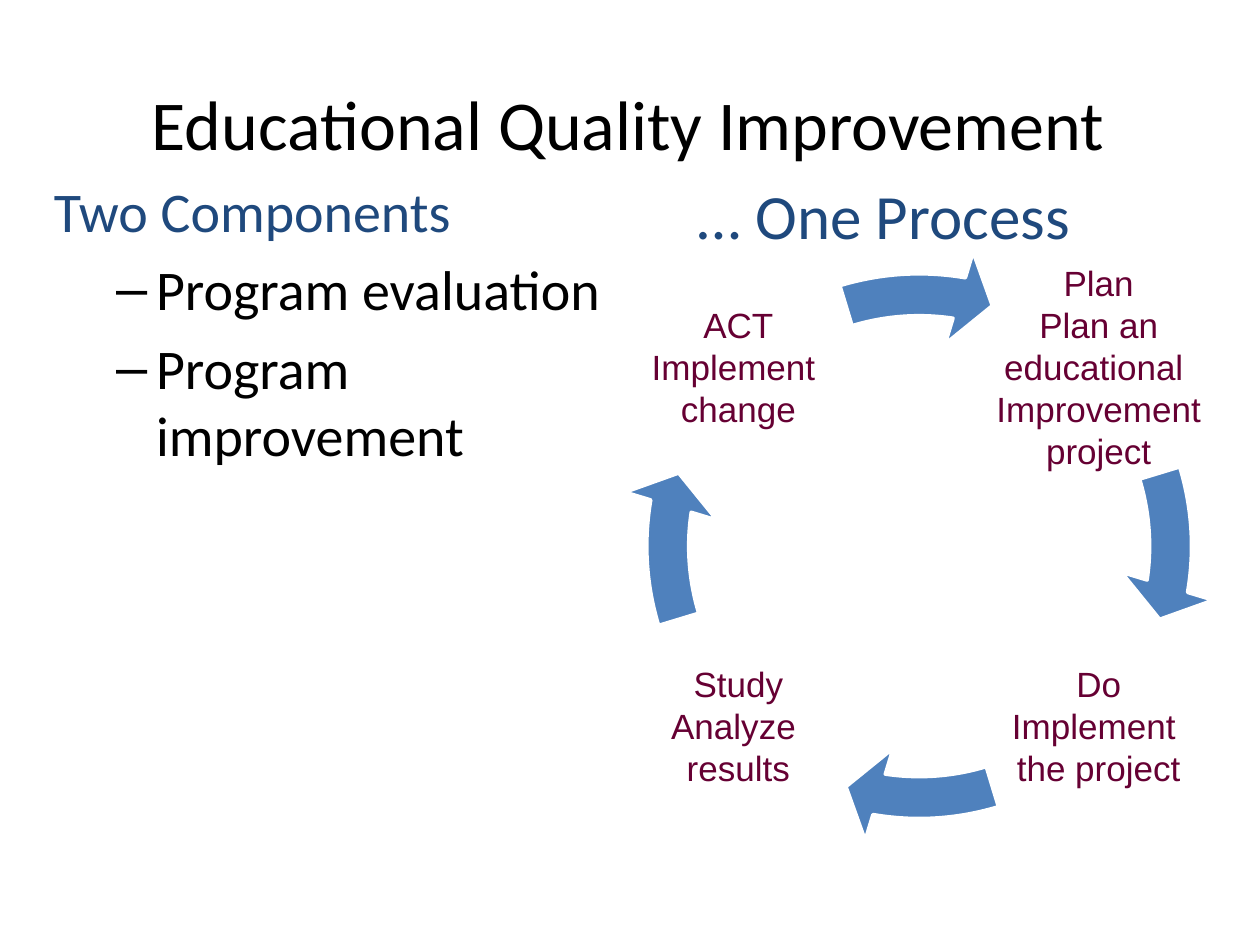
from pptx import Presentation
from pptx import util as u
from pptx.dml.color import RGBColor
from pptx.enum import shapes, text
from lxml import etree

THEME = {
    "ink": "000000", "head": "1F497D", "step": "660033",
    "arrow": "4F81BD", "edge": "FFFFFF",
    "title": 40, "sub": 36, "body": 32, "label": 20,
    "main": "Calibri", "alt": "Arial",
}
NS = "{http://schemas.openxmlformats.org/drawingml/2006/main}"


def apply(obj, vals):
    for key, val in vals.items():
        setattr(obj, key, val)


class Deck:
    def __init__(self, theme):
        self.theme = theme
        self.prs = Presentation()
        apply(self.prs, {"slide_width": u.Inches(10), "slide_height": u.Inches(7.5)})
        self.slide = self.prs.slides.add_slide(self.prs.slide_layouts[6])

    def color(self, name):
        return RGBColor.from_string(self.theme[name])

    def frame(self, area, pad=(0.1, 0.05), anchor=text.MSO_ANCHOR.TOP):
        box = self.slide.shapes.add_textbox(*map(u.Inches, area))
        side, edge = map(u.Inches, pad)
        apply(box.text_frame, {
            "word_wrap": True, "vertical_anchor": anchor,
            "margin_left": side, "margin_right": side,
            "margin_top": edge, "margin_bottom": edge,
        })
        return box.text_frame

    def line(self, frame, words, size, tone, face="main",
             align=text.PP_ALIGN.LEFT, first=True, bullet=None, gap=0):
        para = frame.paragraphs[0] if first else frame.add_paragraph()
        apply(para, {"alignment": align, "space_before": u.Pt(gap)})
        if bullet:
            props = para._p.get_or_add_pPr()
            props.set("marL", str(u.Inches(0.81)))
            props.set("indent", str(u.Inches(-0.31)))
            etree.SubElement(props, NS + "buFont").set("typeface", self.theme["alt"])
            etree.SubElement(props, NS + "buChar").set("char", bullet)
        run = para.add_run()
        run.text = words
        apply(run.font, {"size": u.Pt(self.theme[size]), "name": self.theme[face]})
        run.font.color.rgb = self.color(tone)

    def title(self, words, area):
        frame = self.frame(area, anchor=text.MSO_ANCHOR.MIDDLE)
        self.line(frame, words, "title", "ink", align=text.PP_ALIGN.CENTER)

    def list(self, head, items, area):
        frame = self.frame(area)
        self.line(frame, head, "body", "head")
        for item in items:
            self.line(frame, item, "body", "ink", first=False, bullet="–", gap=6.4)

    def label(self, words, area):
        frame = self.frame(area, (0, 0.03), text.MSO_ANCHOR.MIDDLE)
        for i, row in enumerate(words):
            self.line(frame, row, "label", "step", "alt",
                      text.PP_ALIGN.CENTER, first=i == 0)

    def arrow(self, turn, area):
        arc = self.slide.shapes.add_shape(
            shapes.MSO_SHAPE.CIRCULAR_ARROW, *map(u.Inches, area))
        full, step = 216, 54 * turn
        sizes = (0.07, 4.65, (5.5 + step) % full, (205.85 + step) % full, 0.08)
        for i, val in enumerate(sizes):
            arc.adjustments[i] = val
        arc.shadow.inherit = False
        arc.fill.solid()
        arc.fill.fore_color.rgb = self.color("arrow")
        arc.line.color.rgb = self.color("edge")
        arc.line.width = u.Pt(2)


def main():
    deck = Deck(THEME)
    deck.title("Educational Quality Improvement", (0.33, 0.25, 9.31, 1.45))
    deck.list("Two Components", ["Program evaluation", "Program improvement"],
              (0.33, 1.35, 4.59, 4.84))
    west, east, north, south, side = 5.02, 7.88, 2.07, 4.92, 1.68
    steps = [
        (east, north, ["Plan", "Plan an educational ", "Improvement project"]),
        (east, south, ["Do", "Implement ", "the project"]),
        (west, south, ["Study", "Analyze ", "results"]),
        (west, north, ["ACT", "Implement ", "change"]),
    ]
    for turn, (left, top, words) in enumerate(steps):
        deck.label(words, (left, top, side, side))
        deck.arrow(turn, (4.92, 1.96, 4.75, 4.75))
    frame = deck.frame((5.44, 1.35, 3.31, 0.71))
    deck.line(frame, "… One Process", "sub", "head")
    deck.prs.save("out.pptx")


if __name__ == "__main__":
    main()
